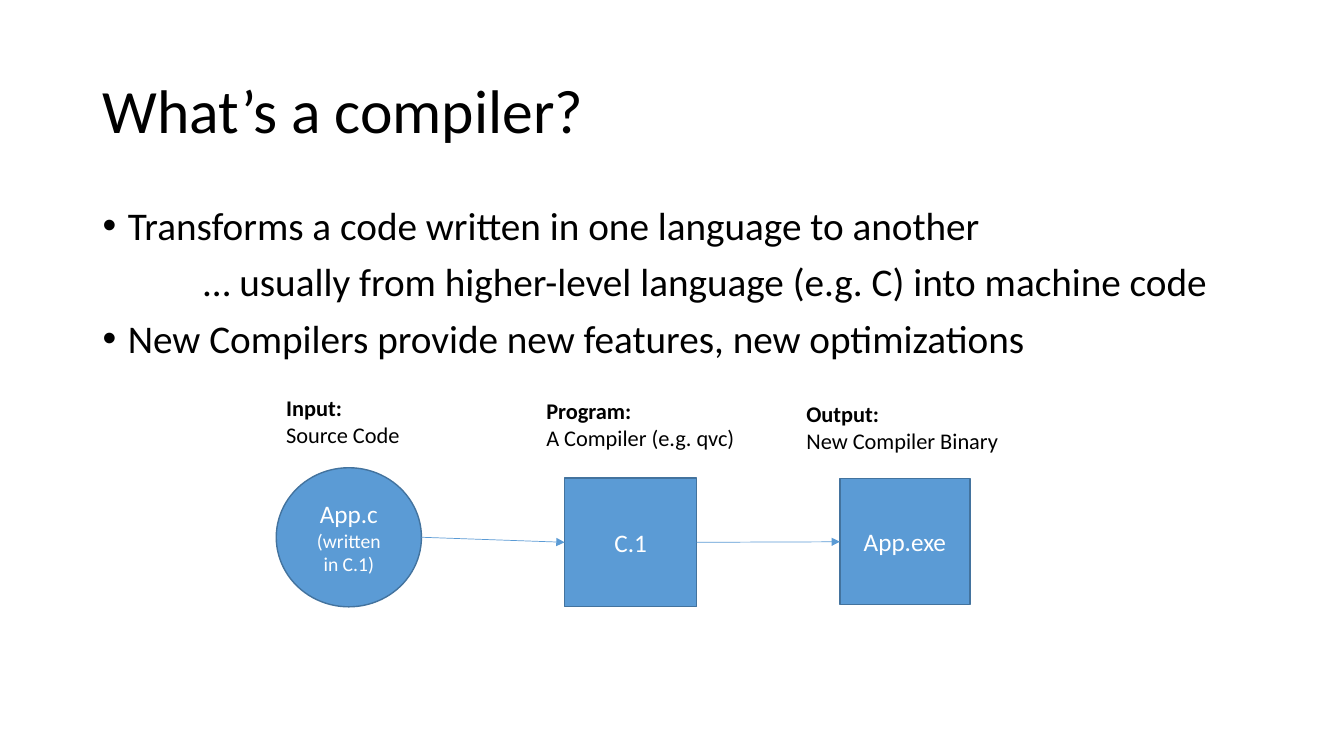
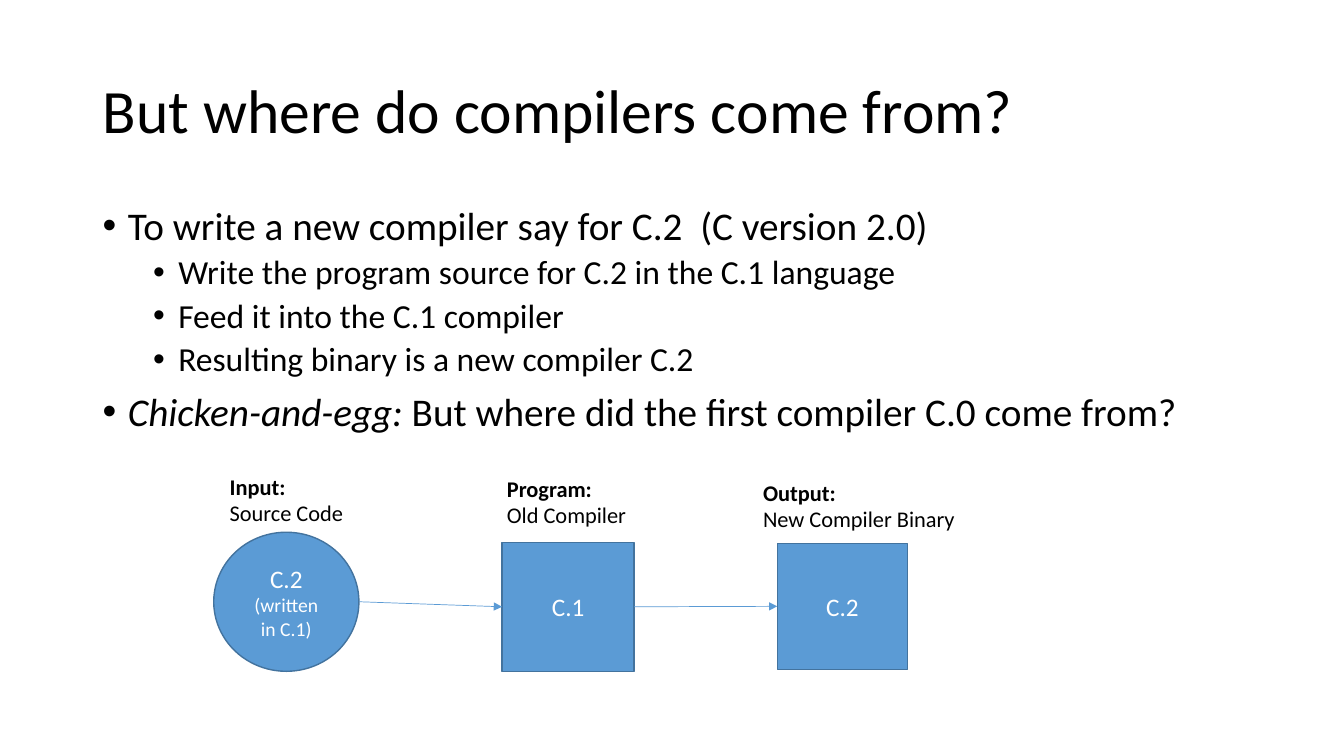
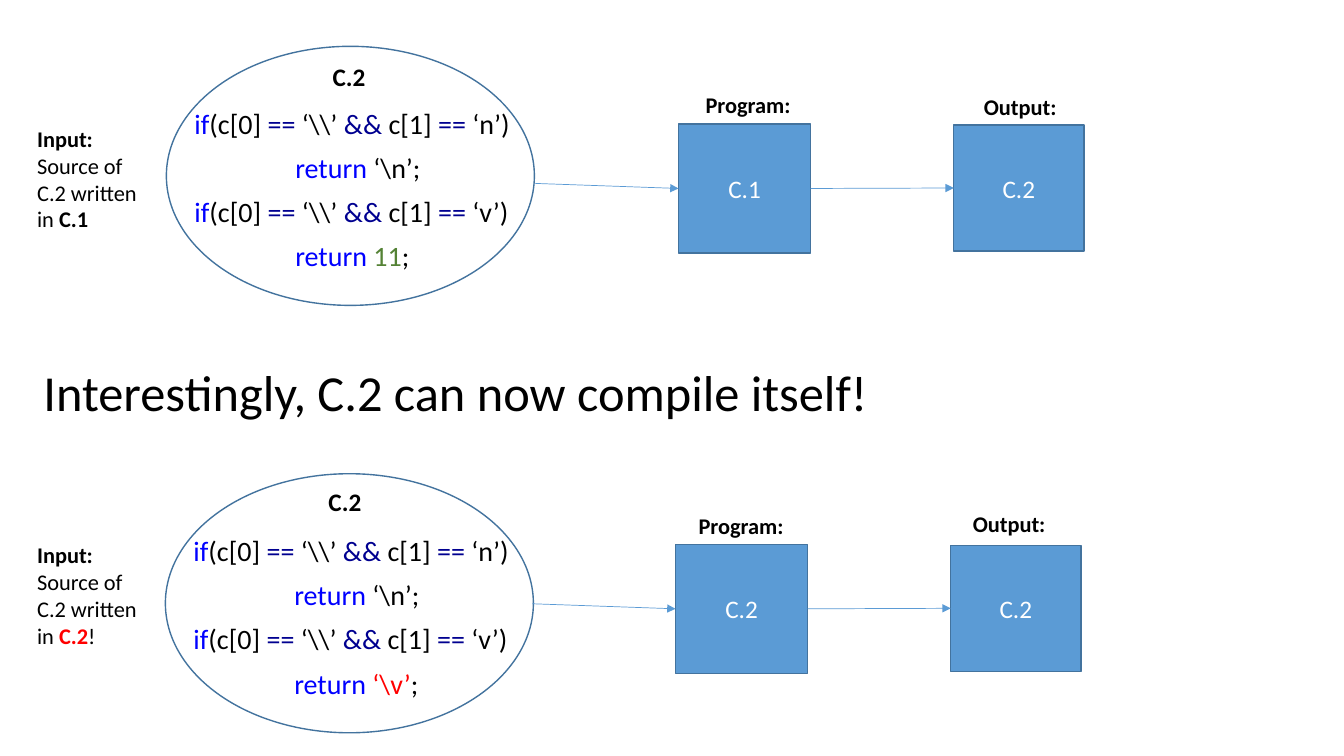
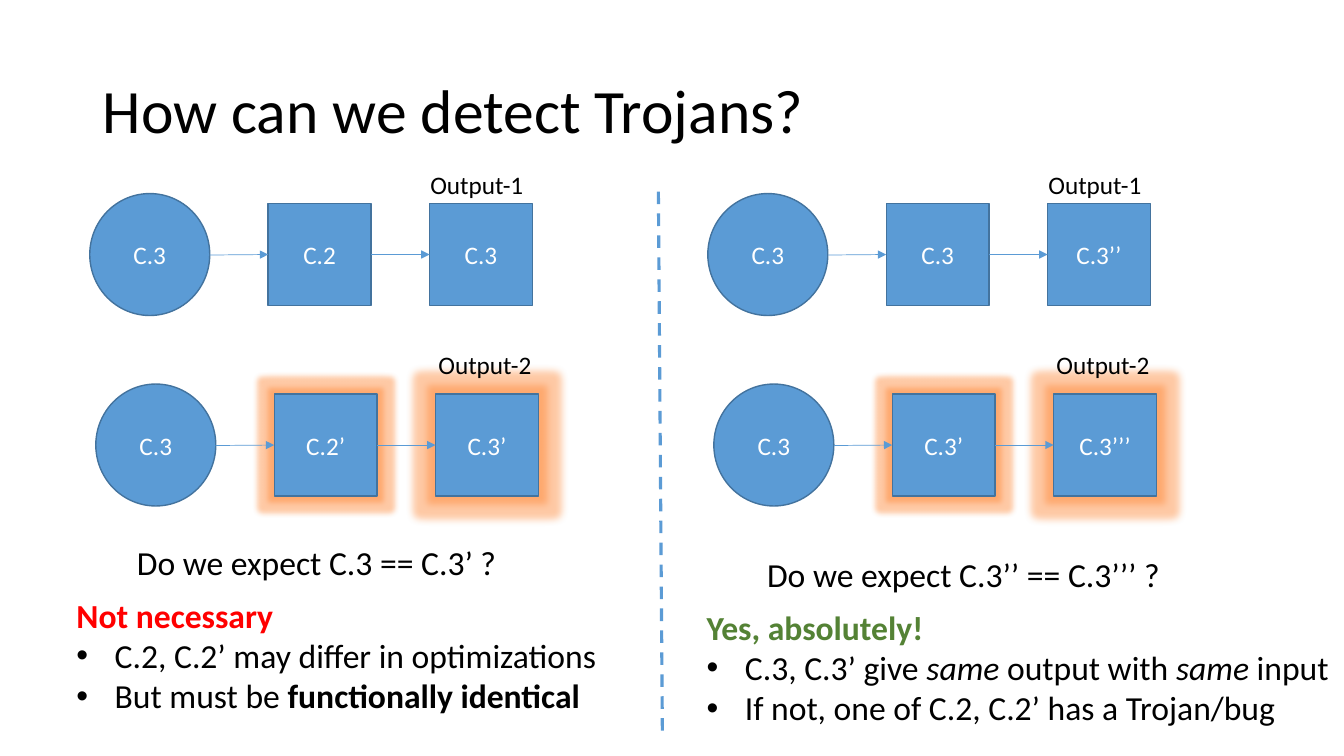
"""Build four slides on compilers, self-compilation and Trojans."""
from dataclasses import dataclass

from lxml import etree
from pptx import Presentation
from pptx import util as u
from pptx.dml.color import RGBColor
from pptx.enum import dml, shapes, text
from pptx.oxml import ns

COLORS = {
    "ink": "000000", "paper": "FFFFFF", "box": "5B9BD5", "edge": "43739E", "glow": "ED7D31",
    "keyword": "0000FF", "operator": "000090", "good": "548235", "bad": "FF0000",
}
FONT = "Calibri"
TITLE_BOX = (0.92, 0.4, 11.5, 1.45)
RECT, OVAL = shapes.MSO_SHAPE.RECTANGLE, shapes.MSO_SHAPE.OVAL
BOLD, ITALIC = {"bold": True}, {"italic": True}


@dataclass
class Line:
    """One paragraph: its (text, style) runs and its layout."""
    runs: list
    size: float = 16
    color: str = "ink"
    bold: bool = False
    bullet: bool = False
    indent: float = 0
    hanging: float = 0
    before: float = 0
    spacing: float = 1
    align: text.PP_ALIGN = text.PP_ALIGN.LEFT


def rgb(name):
    """Return a named colour."""
    return RGBColor.from_string(COLORS[name])


def inches(*lengths):
    """Turn numbers into lengths."""
    return [u.Inches(length) for length in lengths]


def add_xml(parent, tag, **attributes):
    """Append one DrawingML element."""
    return etree.SubElement(parent, ns.qn(tag), attributes)


def style_font(font, size=None, color=None, bold=None, italic=None):
    """Set the font properties that are given."""
    if size:
        font.size = u.Pt(size)
    if color:
        font.color.rgb = rgb(color)
    if bold is not None:
        font.bold = bold
    if italic is not None:
        font.italic = italic


def write(frame, lines):
    """Fill a text frame with lines."""
    for number, line in enumerate(lines):
        paragraph = frame.add_paragraph() if number else frame.paragraphs[0]
        properties = paragraph._p.get_or_add_pPr()
        properties.set("marL", str(u.Inches(line.indent)))
        properties.set("indent", str(u.Inches(-line.hanging)))
        if line.bullet:
            add_xml(properties, "a:buFont", typeface="Arial")
            add_xml(properties, "a:buChar", char="•")
        paragraph.alignment = line.align
        paragraph.line_spacing = line.spacing
        paragraph.space_before = u.Pt(line.before)
        paragraph.font.name = FONT
        style_font(paragraph.font, line.size, line.color, line.bold)
        for words, style in line.runs:
            run = paragraph.add_run()
            run.text = words
            style_font(run.font, **style)


def plain(words, **layout):
    """Return a line with a single run."""
    return Line([(words, {})], **layout)


def add_text(slide, box, lines):
    """Add a wrapping text box."""
    frame = slide.shapes.add_textbox(*inches(*box)).text_frame
    frame.word_wrap = True
    write(frame, lines)


def add_label(slide, box, lines):
    """Add a text box that keeps its lines unbroken."""
    frame = slide.shapes.add_textbox(*inches(*box)).text_frame
    frame.word_wrap = False
    frame.auto_size = text.MSO_AUTO_SIZE.SHAPE_TO_FIT_TEXT
    write(frame, lines)


def add_titled_slide(deck, words, box=TITLE_BOX, size=44):
    """Add a title-only slide and format its title."""
    slide = deck.slides.add_slide(deck.slide_layouts[5])
    title = slide.shapes.title
    title.left, title.top, title.width, title.height = inches(*box)
    frame = title.text_frame
    frame.auto_size = text.MSO_AUTO_SIZE.NONE
    frame.vertical_anchor = text.MSO_ANCHOR.MIDDLE
    write(frame, [plain(words, size=size, spacing=0.9)])
    return slide


def add_node(slide, kind, box, words, notes=(), filled=True, glow=0):
    """Add a circle or square with centred text."""
    node = slide.shapes.add_shape(kind, *inches(*box))
    node.shadow.inherit = False
    node.line.color.rgb = rgb("edge")
    node.line.width = u.Pt(1)
    if filled:
        node.fill.solid()
        node.fill.fore_color.rgb = rgb("box")
    else:
        node.fill.background()
    if glow:
        effects = node._element.spPr.find(ns.qn("a:effectLst"))
        halo = add_xml(effects, "a:glow", rad=str(u.Pt(glow)))
        tint = add_xml(halo, "a:srgbClr", val=COLORS["glow"])
        add_xml(tint, "a:satMod", val="175000")
        add_xml(tint, "a:alpha", val="40000")
    if words:
        node.text_frame.vertical_anchor = text.MSO_ANCHOR.MIDDLE
        look = {"color": "paper", "align": text.PP_ALIGN.CENTER}
        write(node.text_frame, [plain(words, size=18, **look)]
              + [plain(note, size=14, **look) for note in notes])
    return node


def add_line(slide, start, end, width):
    """Add a straight line without a shadow."""
    line = slide.shapes.add_connector(shapes.MSO_CONNECTOR.STRAIGHT, *inches(*start, *end))
    line.line.color.rgb = rgb("box")
    line.line.width = u.Pt(width)
    add_xml(line._element.spPr, "a:effectLst")
    return line


def add_arrow(slide, start, target, source=None):
    """Point an arrow at the left side of a square."""
    arrow = add_line(slide, start, start, 0.5)
    add_xml(arrow.line._get_or_add_ln(), "a:tailEnd", type="triangle")
    if source is not None:
        arrow.begin_connect(source, 3)
    arrow.end_connect(target, 1)


def program_and_output(slide, left, top, program_name, output_name):
    """Add the program and output squares with their arrows."""
    program = add_node(slide, RECT, (left, top, 1.31, 1.28), program_name)
    output = add_node(slide, RECT, (left + 2.73, top + 0.01, 1.29, 1.25), output_name)
    add_arrow(slide, (left - 1.42, top + 0.59), program)
    add_arrow(slide, (left + 1.31, top + 0.64), output, program)


def compile_flow(slide, left, top, names, captions):
    """Add a source circle, its two squares and the captions above."""
    source, program, output = names
    add_node(slide, OVAL, (left, top, 1.44, 1.38), source, ("(written", "in C.1)"))
    program_and_output(slide, left + 2.86, top + 0.1, program, output)
    for head, detail, across, rise, width in captions:
        add_label(slide, (left + across, top - rise, width, 0.64),
                  [plain(head, bold=True), plain(detail)])


def bullet(runs, level=0):
    """Return a bulleted body line."""
    return Line(runs, size=24 if level else 28, bullet=True, indent=0.25 + level * 0.5,
                hanging=0.25, before=5 if level else 10, spacing=0.9)


def code_lines(result, result_color):
    """Return the escape-character code with its last result."""
    keyword, operator = {"color": "keyword"}, {"color": "operator"}

    def test(letter):
        """Return the condition for one letter."""
        return [("if", keyword), ("(c[0] ", {}), ("== ", operator), (r"‘\\’ ", {}),
                ("&& ", operator), ("c[1] ", {}), ("== ", operator), (f"‘{letter}’)", {})]

    layout = {"size": 20, "before": 10, "spacing": 0.9}
    return [
        Line(test("n"), **layout),
        Line([("return", keyword), (r" ‘\n’;", {})], indent=1, **layout),
        Line(test("v"), **layout),
        Line([("return ", keyword), (result, {"color": result_color}), (";", {})],
             indent=1, **layout),
    ]


def self_compile_row(slide, left, top, name_at, code, input_top, language, program_at,
                     program_name, captions):
    """Add code in an ellipse, the input note and the two squares."""
    add_text(slide, (left + 0.18, top + 0.58, 3.41, 2.22), code)
    add_node(slide, OVAL, (left, top, 3.65, 2.57), "", filled=False)
    across, down = name_at
    add_label(slide, (left + across, top + down, 0.53, 0.4), [plain("C.2", size=18, bold=True)])
    add_label(slide, (0.27, input_top, 1.2, 1.18),
              [plain("Input:", bold=True), plain("Source of"), plain("C.2 written"),
               Line([("in ", {})] + language)])
    program_left, program_top = program_at
    program_and_output(slide, program_left, program_top, program_name, "C.2")
    for head, across, rise, width in captions:
        add_label(slide, (program_left + across, program_top - rise, width, 0.37),
                  [plain(head, bold=True)])


def trojan_chain(slide, left, top, names, caption, caption_at, glows=(0, 0)):
    """Add a circle and two squares joined by arrows."""
    source, compiler, result = names
    add_node(slide, OVAL, (left, top, 1.19, 1.21), source)
    first, second = [
        add_node(slide, RECT, (left + across, top + 0.1, 1.02, 1.01), name, glow=glow)
        for across, name, glow in zip((1.77, 3.37), (compiler, result), glows)]
    add_arrow(slide, (left + 1.19, top + 0.61), first)
    add_arrow(slide, (left + 2.79, top + 0.61), second, first)
    across, rise = caption_at
    add_label(slide, (left + across, top - rise, 1.14, 0.4), [plain(caption, size=18)])


def trojan_half(slide, left, chains, answer_at, question, verdict, verdict_color, reasons):
    """Add two chains with the question and answer below."""
    plain_chain, trojan_names = chains
    trojan_chain(slide, left, 1.92, plain_chain, "Output-1", (3.28, 0.29))
    trojan_chain(slide, left + 0.06, 3.81, trojan_names, "Output-2", (3.3, 0.39), (8, 11))
    answer_left, answer_top = answer_at
    add_text(slide, (answer_left + 0.6, answer_top - 0.52, 4.26, 0.5), [plain(question, size=24)])
    add_text(slide, (answer_left, answer_top, 6.54, 1.31),
             [plain(verdict, size=24, color=verdict_color, bold=True)]
             + [Line(runs, size=24, bullet=True, indent=0.38, hanging=0.38) for runs in reasons])


def compiler_slide(deck):
    """Explain what a compiler is."""
    slide = add_titled_slide(deck, "What’s a compiler?")
    add_text(slide, (0.92, 2, 11.5, 3.34), [
        bullet([("Transforms a code written in one language to another", {})]),
        plain("… usually from higher-level language (e.g. C) into machine code",
              size=28, indent=1, before=10, spacing=0.9),
        bullet([("New Compilers provide new features, new optimizations", {})]),
    ])
    compile_flow(slide, 2.74, 4.64, ("App.c", "C.1", "App.exe"), [
        ("Input:", "Source Code", 0, 0.78, 1.34),
        ("Program:", "A Compiler (e.g. qvc)", 2.58, 0.75, 2.07),
        ("Output:", "New Compiler Binary", 5.16, 0.72, 2.13),
    ])


def origin_slide(deck):
    """Ask where compilers come from."""
    slide = add_titled_slide(deck, "But where do compilers come from?")
    steps = ("Write the program source for C.2 in the C.1 language",
             "Feed it into the C.1 compiler", "Resulting binary is a new compiler C.2")
    add_text(slide, (0.92, 2, 11.5, 4.76), [
        bullet([("To write a new compiler say for C.2  (C version 2.0)", {})]),
        *[bullet([(step, {})], level=1) for step in steps],
        bullet([("Chicken-and-egg: ", ITALIC),
                ("But where did the first compiler C.0 come from?", {})]),
    ])
    compile_flow(slide, 2.12, 5.28, ("C.2", "C.1", "C.2"), [
        ("Input:", "Source Code", 0.06, 0.64, 1.34),
        ("Program:", "Old Compiler", 2.81, 0.62, 1.4),
        ("Output:", "New Compiler Binary", 5.35, 0.58, 2.13),
    ])


def self_compile_slide(deck):
    """Show the compiler compiling itself."""
    slide = add_titled_slide(deck, "Interestingly, C.2 can now compile itself!",
                             (0.33, 3.2, 11.89, 1.45), 36)
    self_compile_row(slide, 1.65, 0.46, (1.55, 0.1), code_lines("11", "good"), 1.19,
                     [("C.1", BOLD)], (6.73, 1.23), "C.1",
                     [("Program:", 0.17, 0.37, 1.06), ("Output:", 2.93, 0.36, 0.93)])
    self_compile_row(slide, 1.64, 4.7, (1.52, 0.08), code_lines(r"‘\v’", "bad"), 5.32,
                     [("C.2", {"bold": True, "color": "bad"}), ("!", {})], (6.7, 5.4), "C.2",
                     [("Program:", 0.13, 0.37, 1.06), ("Output:", 2.85, 0.39, 0.93)])


def trojan_slide(deck):
    """Compare two ways of detecting Trojans."""
    slide = add_titled_slide(deck, "How can we detect Trojans?")
    trojan_half(slide, 0.89, [("C.3", "C.2", "C.3"), ("C.3", "C.2’", "C.3’")], (0.66, 5.85),
                "Do we expect C.3 == C.3’ ?", "Not necessary", "bad", [
                    [("C.2, C.2’ may differ in optimizations", {})],
                    [("But must be ", {}), ("functionally identical", BOLD)]])
    divider = add_line(slide, (6.53, 1.9), (6.57, 7.3), 2.25)
    divider.line.dash_style = dml.MSO_LINE.DASH
    trojan_half(slide, 7.02, [("C.3", "C.3", "C.3’’"), ("C.3", "C.3’", "C.3’’’")], (6.91, 5.97),
                "Do we expect C.3’’ == C.3’’’ ?", "Yes, absolutely!", "good", [
                    [("C.3, C.3’ give ", {}), ("same", ITALIC), (" output with ", {}),
                     ("same", ITALIC), (" input", {})],
                    [("If not, one of C.2, C.2’ has a Trojan/bug", {})]])


def main():
    """Build and save the presentation."""
    deck = Presentation()
    deck.slide_width, deck.slide_height = inches(13.33, 7.5)
    for build in (compiler_slide, origin_slide, self_compile_slide, trojan_slide):
        build(deck)
    deck.save("out.pptx")


if __name__ == "__main__":
    main()
